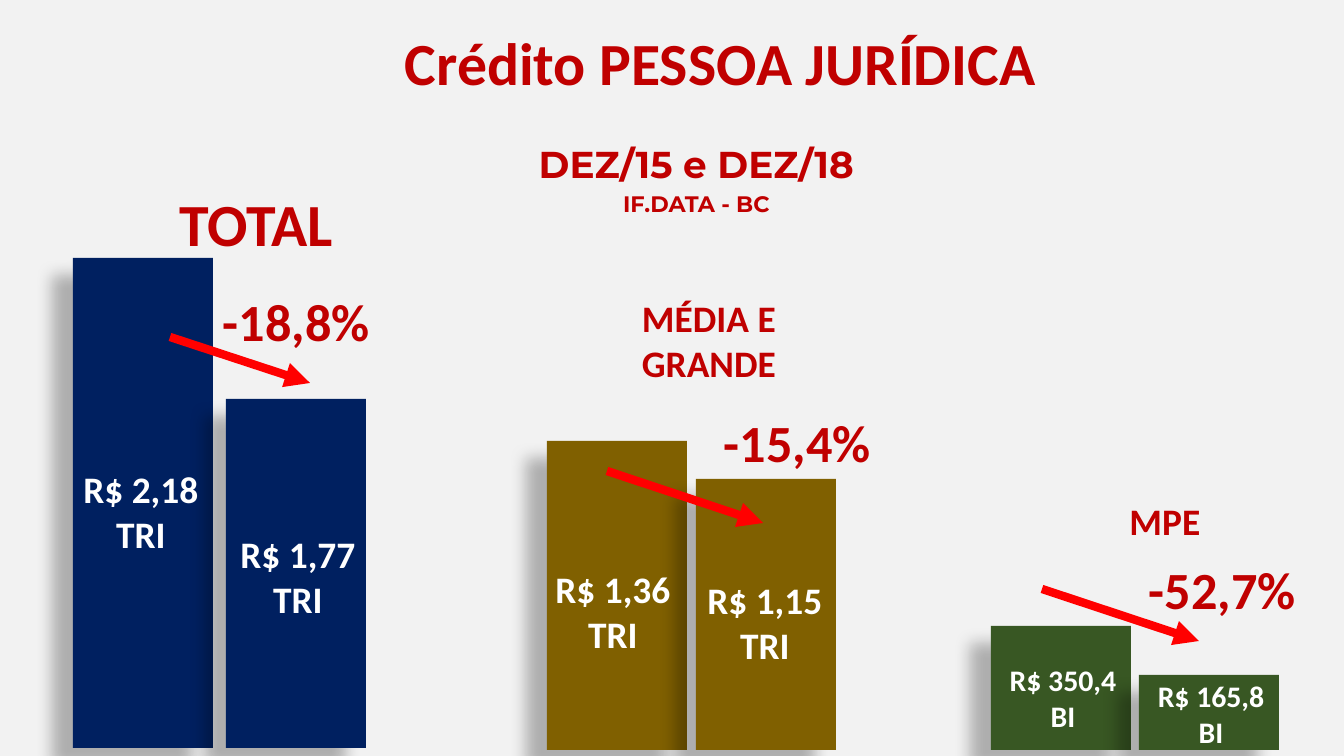
"""Build the slide comparing business credit in DEZ/15 and DEZ/18."""
from lxml.etree import SubElement
from pptx import Presentation
from pptx.dml.color import RGBColor
from pptx.enum.shapes import MSO_CONNECTOR, MSO_SHAPE
from pptx.enum.text import MSO_ANCHOR, MSO_AUTO_SIZE, PP_ALIGN
from pptx.oxml import parse_xml
from pptx.oxml.ns import nsdecls, qn
from pptx.util import Pt

PX = 914400 / 100.8
RED = "C00000"
WHITE = "FFFFFF"
BAR_WIDTH = 140
SHADOW = (
    f'<a:effectLst {nsdecls("a")}><a:outerShdw blurRad="149860" dist="250190" dir="8460000" '
    'algn="tl" rotWithShape="0"><a:srgbClr val="000000"><a:alpha val="28000"/></a:srgbClr>'
    "</a:outerShdw></a:effectLst>"
)


def emu(*lengths):
    """Turn px lengths into EMU."""
    return [round(length * PX) for length in lengths]


def write(shape, text, size, color=RED, font="Calibri", align=PP_ALIGN.CENTER,
          anchor=MSO_ANCHOR.TOP, wrap=False):
    """Fill a shape with bold text."""
    frame = shape.text_frame
    frame.text = text
    frame.word_wrap = wrap
    frame.auto_size = MSO_AUTO_SIZE.NONE
    frame.vertical_anchor = anchor
    for paragraph in frame.paragraphs:
        paragraph.alignment = align
        paragraph.font.name = font
        paragraph.font.size = Pt(size)
        paragraph.font.bold = True
        paragraph.font.color.rgb = RGBColor.from_string(color)


presentation = Presentation()
presentation.slide_width, presentation.slide_height = emu(1344, 756)
slide = presentation.slides.add_slide(presentation.slide_layouts[5])
slide.background.fill.solid()
slide.background.fill.fore_color.rgb = RGBColor.from_string("F2F2F2")

title = slide.shapes.title
title.left, title.top, title.width, title.height = emu(256, 8, 929, 95)
write(title, "Crédito PESSOA JURÍDICA", 42.7, anchor=MSO_ANCHOR.BOTTOM, wrap=True)

for text, box, size in [
    ("DEZ/15 e DEZ/18", (517, 136, 359, 55), 26.7),
    ("IF.DATA - BC", (611, 185, 171, 37), 16),
]:
    write(slide.shapes.add_textbox(*emu(*box)), text, size, font="Montserrat")

segments = [
    {
        "heading": ("TOTAL", (120, 168, 272, 95), 42.7),
        "color": "002060", "bottom": 748, "bars": [(73, 258), (226, 399)],
        "labels": [("R$ 2,18\nTRI", 73, 461), ("R$ 1,77\nTRI", 230, 526)],
        "label_box": (136, 101, 26.7),
        "arrow": (170, 337, 310, 383), "change": ("-18,8%", 213, 284),
    },
    {
        "heading": ("MÉDIA E GRANDE", (573, 295, 272, 95), 26.7),
        "color": "806000", "bottom": 750, "bars": [(547, 441), (696, 479)],
        "labels": [("R$ 1,36\nTRI", 545, 561), ("R$ 1,15\nTRI", 697, 572)],
        "label_box": (136, 101, 26.7),
        "arrow": (607, 471, 763, 523), "change": ("-15,4%", 714, 405),
    },
    {
        "heading": ("MPE", (1029, 488, 272, 60), 26.7),
        "color": "385723", "bottom": 750, "bars": [(991, 626), (1139, 675)],
        "labels": [("R$ 350,4\nBI", 999, 657), ("R$ 165,8\nBI", 1147, 673)],
        "label_box": (128, 83, 21.3),
        "arrow": (1042, 589, 1199, 641), "change": ("-52,7%", 1139, 552),
    },
]

for segment in segments:
    shapes = slide.shapes.add_group_shape().shapes
    for left, top in segment["bars"]:
        bar = shapes.add_shape(
            MSO_SHAPE.RECTANGLE, *emu(left, top, BAR_WIDTH, segment["bottom"] - top))
        bar.fill.solid()
        bar.fill.fore_color.rgb = RGBColor.from_string(segment["color"])
        bar.line.fill.background()
        bar._element.spPr.append(parse_xml(SHADOW))

    width, height, size = segment["label_box"]
    for text, left, top in segment["labels"]:
        write(shapes.add_textbox(*emu(left, top, width, height)), text, size, WHITE)

    arrow = shapes.add_connector(MSO_CONNECTOR.STRAIGHT, *emu(*segment["arrow"]))
    arrow.line.color.rgb = RGBColor.from_string("FF0000")
    arrow.line.width = Pt(6)
    SubElement(arrow.line._get_or_add_ln(), qn("a:tailEnd"), type="triangle")
    SubElement(arrow._element.spPr, qn("a:effectLst"))

    change, left, top = segment["change"]
    write(shapes.add_textbox(*emu(left, top, 168, 74)), change, 37.3, align=PP_ALIGN.LEFT)

    heading, box, size = segment["heading"]
    write(shapes.add_textbox(*emu(*box)), heading, size, anchor=MSO_ANCHOR.BOTTOM, wrap=True)

presentation.save("out.pptx")
